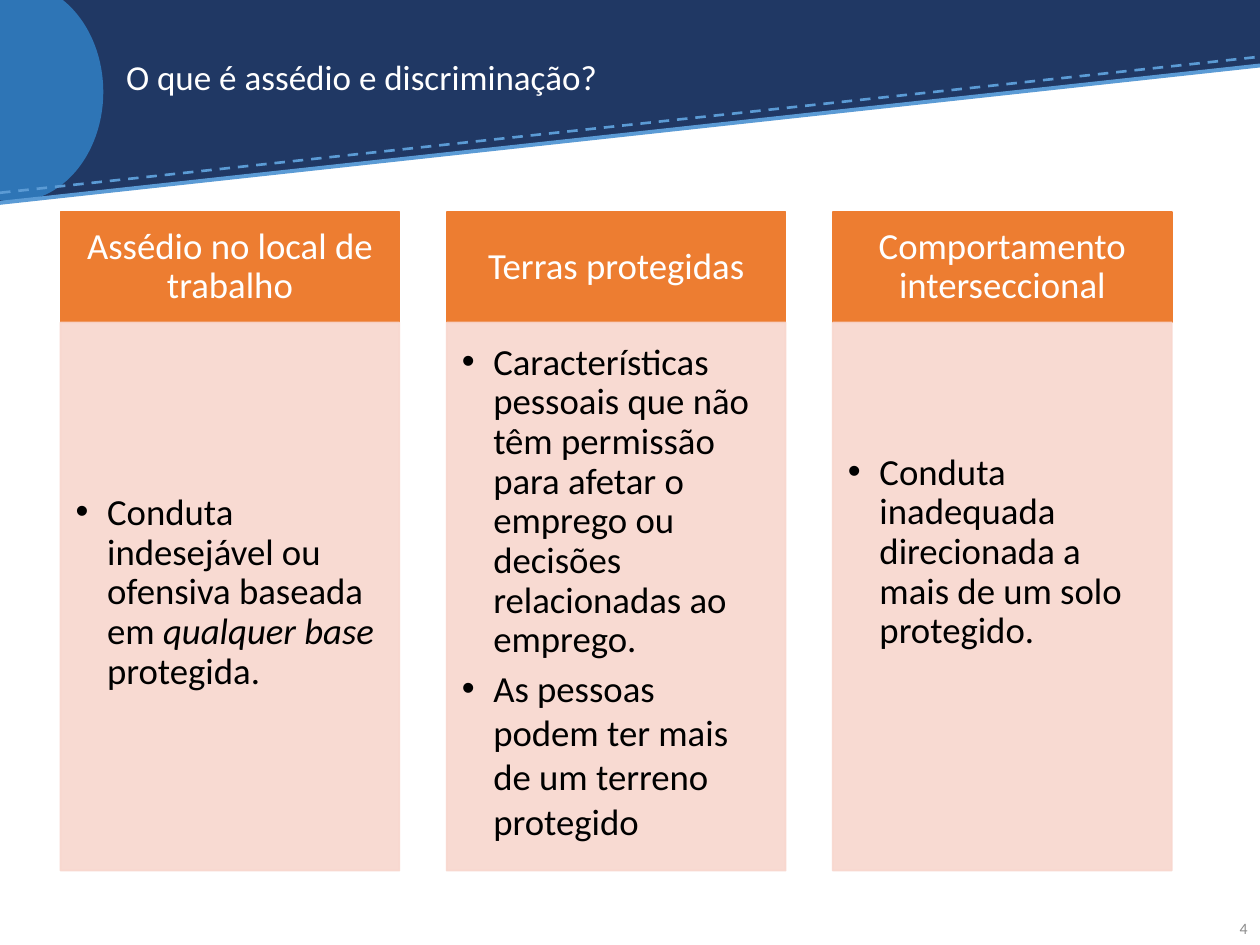
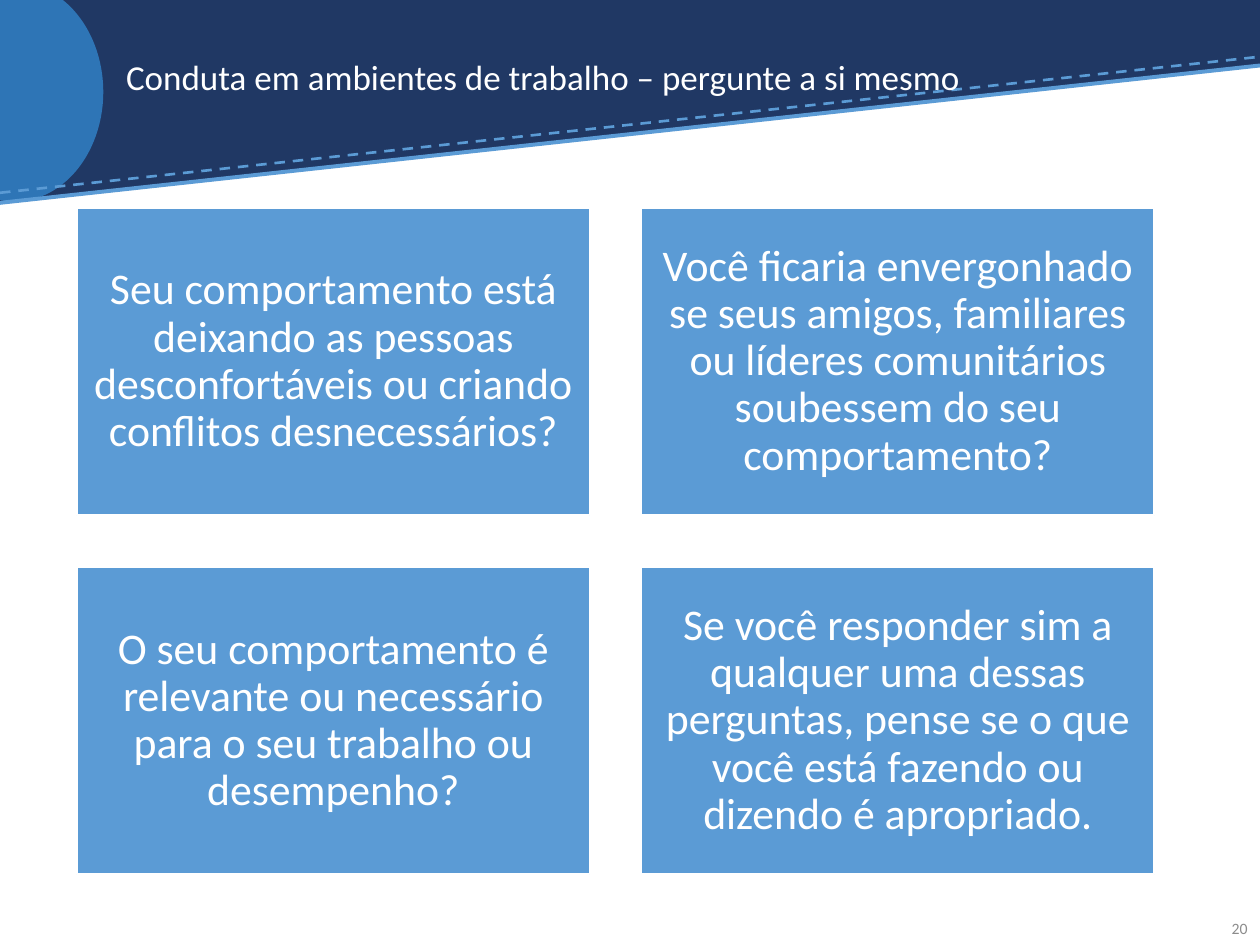
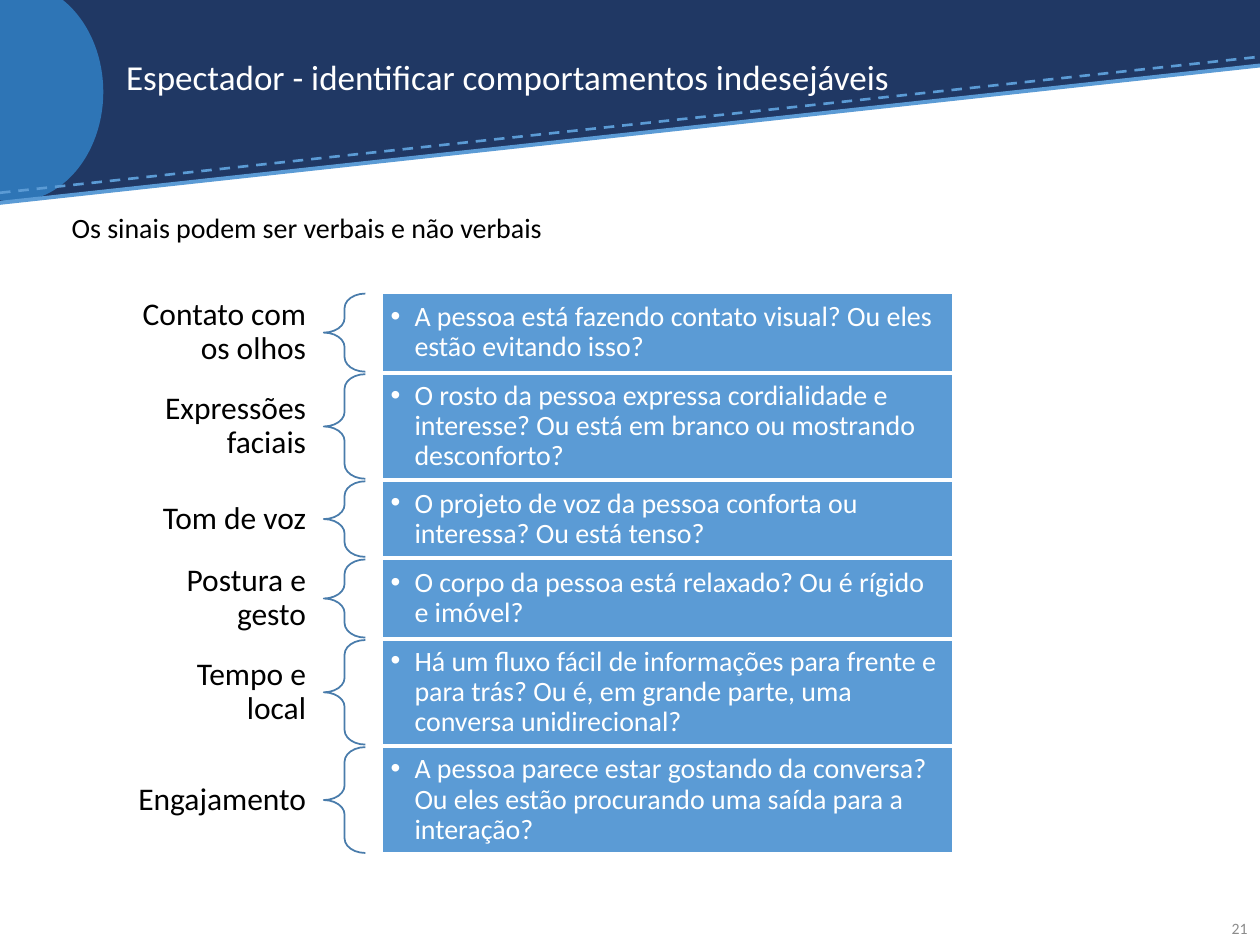
from lxml import etree
from pptx import Presentation
from pptx.dml.color import RGBColor
from pptx.enum import dml, shapes, text
from pptx.oxml.ns import qn
from pptx.util import Inches, Pt

FONT = "Calibri"
COLORS = {
    "navy": "203864",
    "circle": "2E75B6",
    "blue": "5B9BD5",
    "orange": "ED7D31",
    "peach": "F8D7CE",
    "brace": "497CAB",
    "gray": "8C8C8C",
    "white": "FFFFFF",
    "black": "000000",
}
RECT = shapes.MSO_SHAPE.RECTANGLE
CENTER, RIGHT = text.PP_ALIGN.CENTER, text.PP_ALIGN.RIGHT
MIDDLE, TOP = text.MSO_ANCHOR.MIDDLE, text.MSO_ANCHOR.TOP
DEFAULT_INSETS = (0.1, 0.05, 0.1, 0.05)

GROUNDS = [
    ("Assédio no local de trabalho",
     [[("Conduta indesejável ou ofensiva baseada em ", False),
       ("qualquer base ", True), ("protegida.", False)]], 0.18),
    ("Terras protegidas",
     ["Características pessoais que não têm permissão para afetar o emprego "
      "ou decisões relacionadas ao emprego.",
      "As pessoas podem ter mais de um terreno protegido"], 0.18),
    ("Comportamento interseccional",
     ["Conduta inadequada direcionada a mais de um solo protegido."], 0.82),
]
QUESTIONS = [
    "Seu comportamento está deixando as pessoas desconfortáveis ou criando "
    "conflitos desnecessários?",
    "Você ficaria envergonhado se seus amigos, familiares ou líderes "
    "comunitários soubessem do seu comportamento?",
    "O seu comportamento é relevante ou necessário para o seu trabalho ou "
    "desempenho?",
    "Se você responder sim a qualquer uma dessas perguntas, pense se o que "
    "você está fazendo ou dizendo é apropriado.",
]
SIGNALS = [
    ("Contato com os olhos", 0.62, 0.62,
     "A pessoa está fazendo contato visual? Ou eles estão evitando isso?"),
    ("Expressões faciais", 0.62, 0.83,
     "O rosto da pessoa expressa cordialidade e interesse? Ou está em branco "
     "ou mostrando desconforto?"),
    ("Tom de voz", 0.36, 0.6,
     "O projeto de voz da pessoa conforta ou interessa? Ou está tenso?"),
    ("Postura e gesto", 0.62, 0.62,
     "O corpo da pessoa está relaxado? Ou é rígido e imóvel?"),
    ("Tempo e local", 0.62, 0.83,
     "Há um fluxo fácil de informações para frente e para trás? Ou é, em "
     "grande parte, uma conversa unidirecional?"),
    ("Engajamento", 0.36, 0.84,
     "A pessoa parece estar gostando da conversa? Ou eles estão procurando "
     "uma saída para a interação?"),
]


def rgb(name):
    return RGBColor.from_string(COLORS[name])


def add_box(slide, kind, box, fill=None, line=None):
    shape = slide.shapes.add_shape(kind, *map(Inches, box))
    shape.shadow.inherit = False
    if fill:
        shape.fill.solid()
        shape.fill.fore_color.rgb = rgb(fill)
    else:
        shape.fill.background()
    if line:
        shape.line.color.rgb = rgb(line)
        shape.line.width = Pt(1)
    else:
        shape.line.fill.background()
    return shape


def set_alpha(shape, percent):
    for color in shape._element.spPr.iter(qn("a:srgbClr")):
        etree.SubElement(color, qn("a:alpha")).set("val", str(percent * 1000))


def add_bullet(paragraph, indent):
    properties = paragraph._p.get_or_add_pPr()
    properties.set("marL", str(Inches(indent)))
    properties.set("indent", str(-Inches(indent)))
    etree.SubElement(properties, qn("a:buFont")).set("typeface", "Arial")
    etree.SubElement(properties, qn("a:buChar")).set("char", "•")


def write(shape, items, size, color, align=text.PP_ALIGN.LEFT, anchor=MIDDLE,
          insets=DEFAULT_INSETS, bullet=0, after=0, spacing=0.9):
    frame = shape.text_frame
    frame.word_wrap = True
    frame.auto_size = text.MSO_AUTO_SIZE.NONE
    frame.vertical_anchor = anchor
    (frame.margin_left, frame.margin_top,
     frame.margin_right, frame.margin_bottom) = map(Inches, insets)
    for index, item in enumerate(items):
        paragraph = frame.add_paragraph() if index else frame.paragraphs[0]
        if bullet:
            add_bullet(paragraph, bullet)
        for words, italic in [(item, False)] if isinstance(item, str) else item:
            run = paragraph.add_run()
            run.text = words
            if italic:
                run.font.italic = True
        paragraph.alignment = align
        paragraph.line_spacing = spacing
        paragraph.space_after = Pt(after)
        paragraph.font.name = FONT
        paragraph.font.size = Pt(size)
        paragraph.font.color.rgb = rgb(color)


def add_label(slide, box, words, size, color, **style):
    label = slide.shapes.add_textbox(*map(Inches, box))
    write(label, [words], size, color, **style)


def add_rule(slide, start, end, width, dash=None):
    rule = slide.shapes.add_connector(
        shapes.MSO_CONNECTOR.STRAIGHT, *map(Inches, (*start, *end)))
    rule.line.color.rgb = rgb("blue")
    rule.line.width = Pt(width)
    if dash:
        rule.line.dash_style = dash
    etree.SubElement(rule._element.spPr, qn("a:effectLst"))
    return rule


def add_band(slide, layout):
    wedge = add_box(slide, shapes.MSO_SHAPE.RIGHT_TRIANGLE,
                    (0, 0.51, 10, 1.09), "navy")
    wedge._element.spPr.xfrm.set("flipV", "1")
    band = [
        add_box(slide, RECT, (0, 0, 10, 0.52), "navy"),
        wedge,
        add_box(slide, shapes.MSO_SHAPE.OVAL, (-0.59, -0.14, 1.41, 1.74), "circle"),
        add_rule(slide, (0, 1.53), (10, 0.45), 1.5, dml.MSO_LINE.DASH),
        add_rule(slide, (0, 1.61), (10, 0.52), 2.25),
    ]
    for position, part in enumerate(band, 2):
        layout.shapes._spTree.insert(position, part._element)


def add_page(deck, heading, number):
    layout = deck.slide_layouts[5]
    slide = deck.slides.add_slide(layout)
    if len(deck.slides) == 1:
        add_band(slide, layout)
    title = slide.shapes.title
    title.left, title.top, title.width, title.height = map(
        Inches, (0.9, 0.2, 8.05, 0.86))
    write(title, [heading], 20, "white")
    add_label(slide, (9.47, 7.17, 0.53, 0.4), number, 9, "gray",
              align=RIGHT, spacing=1)
    return slide


def add_columns(slide, box, columns):
    left, top, width, height = box
    column_width, header_height = 2.69, 0.88
    pitch = (width - column_width) / (len(columns) - 1)
    for index, (heading, points, bottom_inset) in enumerate(columns):
        x = left + index * pitch
        header = add_box(slide, RECT, (x, top, column_width, header_height),
                         "orange", "orange")
        write(header, [heading], 21, "white", align=CENTER,
              insets=(0.16, 0.09, 0.16, 0.09))
        panel = add_box(slide, RECT, (x, top + header_height, column_width,
                                      height - header_height), "peach", "peach")
        set_alpha(panel, 90)
        write(panel, points, 21, "black", bullet=0.25, after=3,
              insets=(0.12, 0.12, 0.16, bottom_inset))
        for paragraph in panel.text_frame.paragraphs[1:]:
            paragraph.line_spacing = 1


def add_question_grid(slide, box, questions):
    left, top, width, height = box
    card_width, card_height, gap = (width - 0.41) / 2, (height - 0.41) / 2, 0.41
    for index, question in enumerate(questions):
        row, column = divmod(index, 2)
        card = add_box(slide, RECT, (left + column * (card_width + gap),
                                     top + row * (card_height + gap),
                                     card_width, card_height), "blue", "white")
        write(card, [question], 25, "white", align=CENTER, insets=(0.1,) * 4)


def add_signal_list(slide, left, top, signals):
    label_width, brace_width, answer_offset, answer_width = 1.67, 0.33, 2.13, 4.53
    for signal, label_height, height, question in signals:
        add_label(slide, (left, top + (height - label_height) / 2,
                          label_width, label_height), signal, 18, "black",
                  align=RIGHT, insets=(0.14, 0.05, 0.14, 0.05))
        brace = add_box(slide, shapes.MSO_SHAPE.LEFT_BRACE,
                        (left + label_width, top, brace_width, height),
                        line="brace")
        brace.adjustments[0] = 0.35
        answer = add_box(slide, RECT, (left + answer_offset, top, answer_width,
                                       height), "blue", "white")
        write(answer, [question], 16, "white", bullet=0.19, insets=(0.07,) * 4)
        top += height + 0.02


def main():
    deck = Presentation()
    deck.slide_width, deck.slide_height = Inches(10), Inches(7.5)

    definitions = add_page(deck, "O que é assédio e discriminação?", "4")
    add_columns(definitions, (0.48, 1.68, 8.82, 5.23), GROUNDS)

    conduct = add_page(
        deck, "Conduta em ambientes de trabalho – pergunte a si mesmo", "20")
    add_question_grid(conduct, (0.61, 1.65, 8.55, 5.29), QUESTIONS)

    bystander = add_page(
        deck, "Espectador - identificar comportamentos indesejáveis", "21")
    add_label(bystander, (0.47, 1.65, 8.83, 5.3),
              "Os sinais podem ser verbais e não verbais", 16, "black", anchor=TOP)
    add_signal_list(bystander, 0.9, 2.33, SIGNALS)

    deck.save("out.pptx")


if __name__ == "__main__":
    main()
